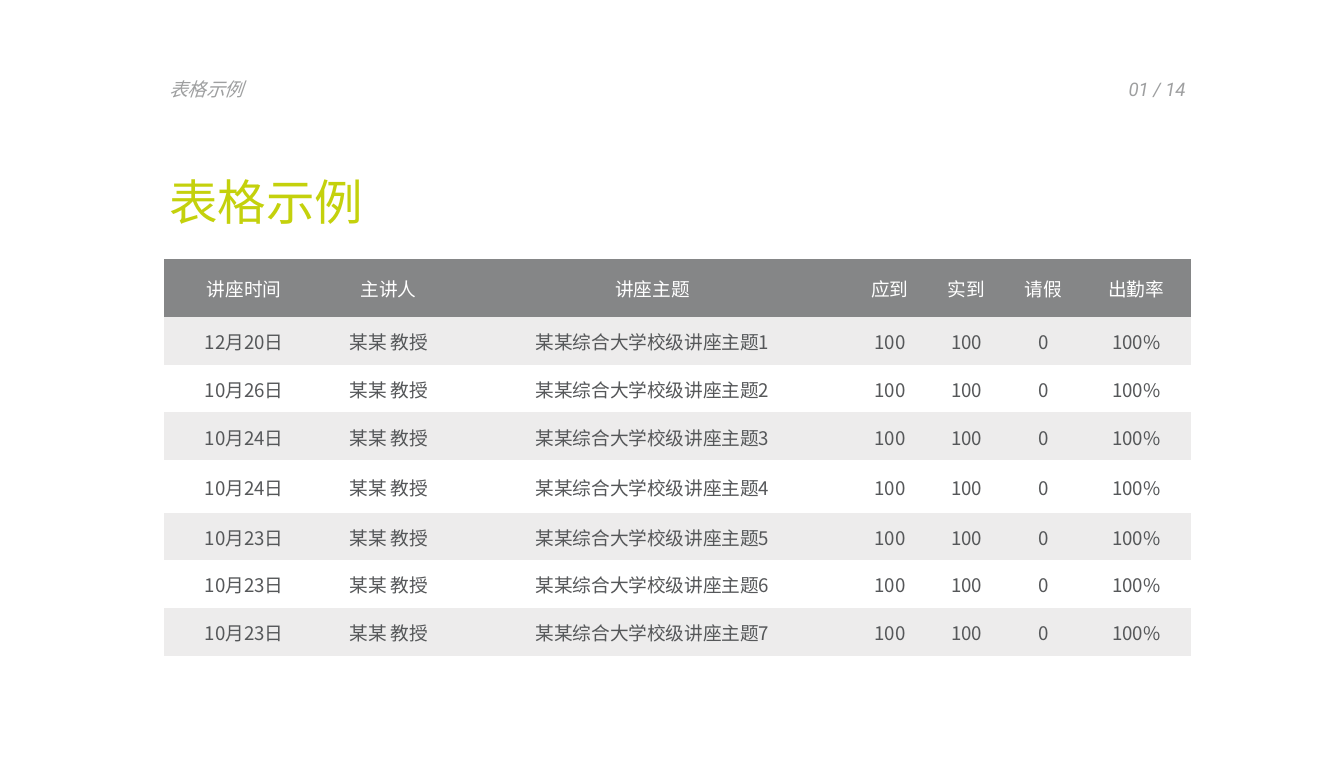
from pptx import Presentation
from pptx.dml.color import RGBColor as RGB
from pptx.enum.text import MSO_ANCHOR as Anchor, MSO_AUTO_SIZE as Fit, PP_ALIGN as Align
from pptx.oxml.ns import qn
from pptx.util import Inches, Pt
from lxml.etree import SubElement

COLORS = {"lime": "C4D10C", "muted": "9E9FA0", "text": "555759",
          "head": "858687", "band": "EDECEC", "white": "FFFFFF"}
SANS, LATIN = "Noto Sans CJK SC", "Roboto"
PLAIN = "{2D5ABB26-0587-4C30-8999-92F81FD0307C}"  # table style without grid

HEADS = ["讲座时间", "主讲人", "讲座主题", "应到", "实到", "请假", "出勤率"]
DATES = ["12月20日", "10月26日", "10月24日", "10月24日",
         "10月23日", "10月23日", "10月23日"]
WIDTHS = [1.19, 0.96, 2.96, 0.57, 0.57, 0.57, 0.81]
HEAD_H, TALL_H, TALL_ROW = 0.43, 0.39, 4


def color(name):
    return RGB.from_string(COLORS[name])


def write(frame, text, size, ink, face=SANS, align=Align.LEFT, **style):
    """Fill a text frame with one formatted line."""
    para = frame.paragraphs[0]
    para.alignment = align
    run = para.add_run()
    run.text = text
    for key, value in {"size": Pt(size), "name": face, **style}.items():
        setattr(run.font, key, value)
    run.font.color.rgb = color(ink)
    SubElement(run.font._element, qn("a:ea"), typeface=face)
    return para


def add_line(slide, box, text, size, ink, **style):
    """Text box whose line spacing equals its type size."""
    frame = slide.shapes.add_textbox(*map(Inches, box)).text_frame
    frame.word_wrap = True
    frame.auto_size = Fit.SHAPE_TO_FIT_TEXT
    write(frame, text, size, ink, **style).line_spacing = Pt(size)


def add_grid(slide, box, rows):
    """Attendance table with a dark header and striped rows."""
    frame = slide.shapes.add_table(len(rows), len(WIDTHS), *map(Inches, box))
    table = frame.table
    table.first_row = table.horz_banding = False
    frame.element.find(".//" + qn("a:tableStyleId")).text = PLAIN

    # Header and one taller row; the others share what is left
    row_h = (box[3] - HEAD_H - TALL_H) / (len(rows) - 2)
    heights = {0: HEAD_H, TALL_ROW: TALL_H}
    for col, width in zip(table.columns, WIDTHS):
        col.width = Inches(width * box[2] / sum(WIDTHS))

    pad = Inches(0.01)
    layout = {"margin_left": pad, "margin_right": pad, "margin_top": pad,
              "margin_bottom": 0, "vertical_anchor": Anchor.MIDDLE}
    for i, row in enumerate(rows):
        table.rows[i].height = Inches(heights.get(i, row_h))
        fill = "head" if i == 0 else "band" if i % 2 else "white"
        for j, text in enumerate(row):
            cell = table.cell(i, j)
            for key, value in layout.items():
                setattr(cell, key, value)
            cell.fill.solid()
            cell.fill.fore_color.rgb = color(fill)
            write(cell.text_frame, text, 10, "text" if i else "white",
                  align=Align.CENTER)


def main():
    deck = Presentation()
    deck.slide_width, deck.slide_height = Inches(10), Inches(5.67)
    slide = deck.slides.add_slide(deck.slide_layouts[6])

    # Attendance table
    rows = [HEADS] + [
        [date, "某某 教授", f"某某综合大学校级讲座主题{n}", "100", "100", "0", "100%"]
        for n, date in enumerate(DATES, 1)]
    add_grid(slide, (1.22, 1.93, 7.64, 2.95), rows)

    # Running head, title and page count
    add_line(slide, (1.16, 0.56, 2.39, 0.24), "表格示例", 10, "muted", italic=True)
    add_line(slide, (1.16, 1.3, 3.68, 0.47), "表格示例", 26, "lime")
    add_line(slide, (7.95, 0.56, 0.97, 0.24), "01 / 14", 10, "muted",
             face=LATIN, align=Align.RIGHT, italic=True)

    deck.save("out.pptx")


if __name__ == "__main__":
    main()
